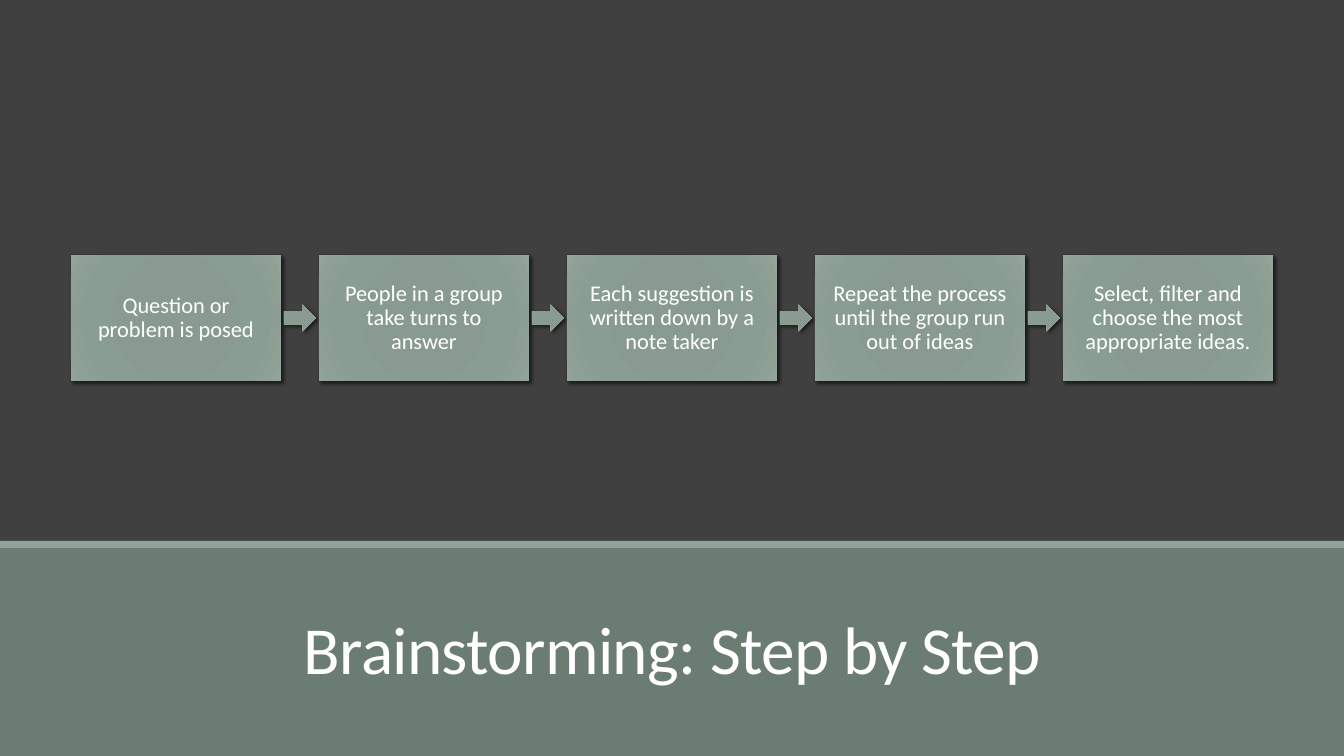
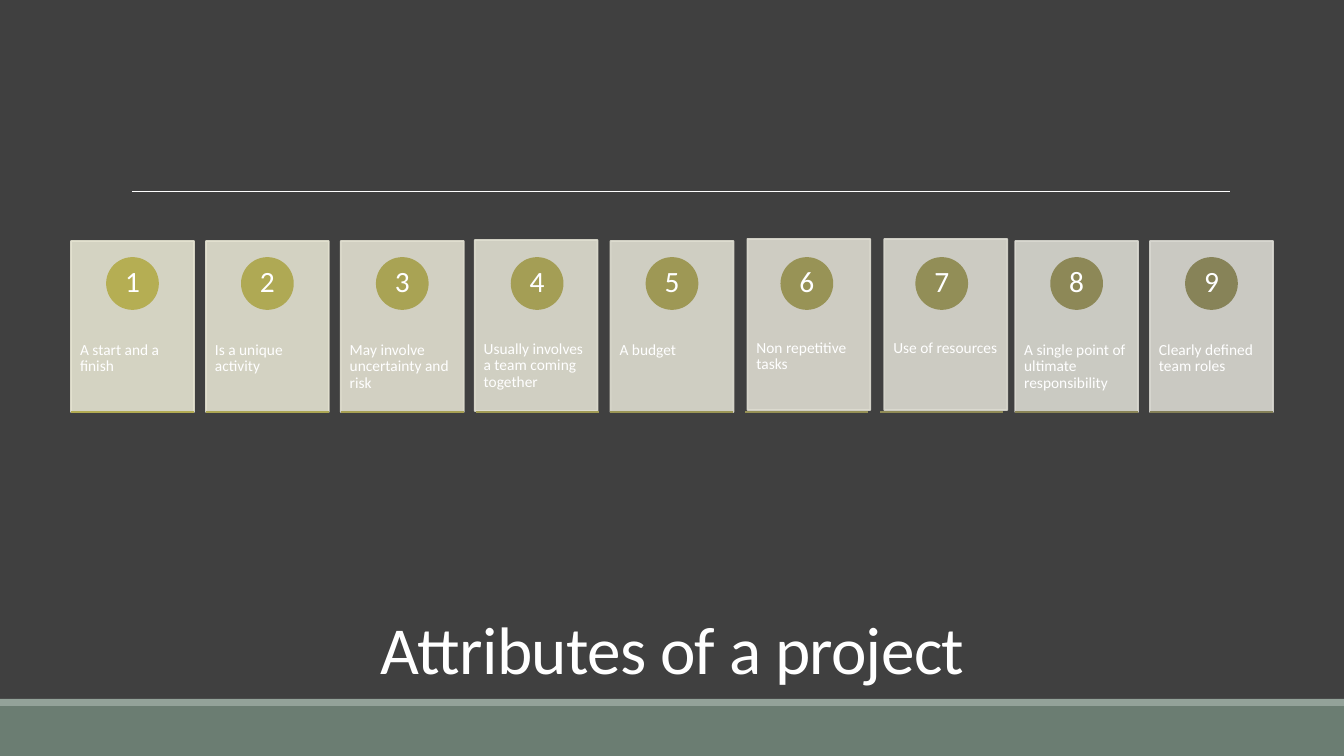
"""Build two slides: brainstorming steps and project attributes."""
from pptx import Presentation
from pptx import util as u
from pptx.dml import color
from pptx.enum import shapes, text
from pptx.oxml import parse_xml
from pptx.oxml import ns

PX = 914400 / 100.8
W, H = 1344, 756
FONT = "Calibri"
C = {
    "back": "404040", "panel": "6B7D72", "stripe": "93A299", "white": "FFFFFF",
    "badge_first": "B5AE53", "badge_last": "848058",
    "card_first": "E5E3D1", "card_last": "D9D8D1", "shadow": "000000",
}
GLOW = [(0, "87998E"), (34, "899A90"), (70, "8A9D92"), (100, "92A399")]
STEPS = [
    "Question or problem is posed",
    "People in a group take turns to answer",
    "Each suggestion is written down by a note taker",
    "Repeat the process until the group run out of ideas",
    "Select, filter and choose the most appropriate ideas.",
]
ATTRIBUTES = [
    "A start and a finish", "Is a unique activity",
    "May involve uncertainty and risk",
    "Usually involves a team coming together", "A budget",
    "Non repetitive tasks", "Use of resources",
    "A single point of ultimate responsibility", "Clearly defined team roles",
]
NUDGES = {3: (-1, -1), 5: (2, -2), 6: (4, -2)}
CENTER, LEFT = text.PP_ALIGN.CENTER, text.PP_ALIGN.LEFT
MIDDLE, TOP = text.MSO_ANCHOR.MIDDLE, text.MSO_ANCHOR.TOP
RECT = shapes.MSO_SHAPE.RECTANGLE


def px(n):
    """Turn px into EMU."""
    return u.Emu(round(n * PX))


def rgb(value):
    """Return a colour from a hex string."""
    return color.RGBColor.from_string(value)


def blend(first, last, t):
    """Return the hex colour at fraction t between two colours."""
    pairs = zip(rgb(first), rgb(last))
    return "".join(f"{round(a + (b - a) * t):02X}" for a, b in pairs)


def apply(obj, values):
    """Set attributes from a dict of format values."""
    for name, value in values.items():
        setattr(obj, name, value)


def write(sp, words, size, align=CENTER, anchor=MIDDLE, insets=(0, 0, 0, 0), spacing=0.9):
    """Put one formatted paragraph in a shape."""
    tf = sp.text_frame
    sides = ("margin_left", "margin_top", "margin_right", "margin_bottom")
    apply(tf, {"word_wrap": True, "auto_size": text.MSO_AUTO_SIZE.NONE,
               "vertical_anchor": anchor, **dict(zip(sides, map(px, insets)))})
    p = tf.paragraphs[0]
    apply(p, {"alignment": align, "line_spacing": spacing})
    r = p.add_run()
    r.text = words
    apply(r.font, {"name": FONT, "size": u.Pt(size)})
    r.font.color.rgb = rgb(C["white"])
    return r


def add_shape(s, kind, box, fill=None, line=0):
    """Add a shadowless preset shape, with an outline of its fill colour if asked."""
    sp = s.shapes.add_shape(kind, *map(px, box))
    sp.shadow.inherit = False
    if fill:
        sp.fill.solid()
        sp.fill.fore_color.rgb = rgb(fill)
    if line:
        sp.line.width = u.Pt(line)
        sp.line.color.rgb = rgb(fill)
    else:
        sp.line.fill.background()
    return sp


def add_line(s, x1, x2, y, hue, width):
    """Add a level line without a shadow."""
    c = s.shapes.add_connector(shapes.MSO_CONNECTOR.STRAIGHT, px(x1), px(y), px(x2), px(y))
    c.line.color.rgb = rgb(hue)
    c.line.width = u.Pt(width)
    c._element.spPr.append(parse_xml(f"<a:effectLst {ns.nsdecls('a')}/>"))


def add_glow(s, kind, box):
    """Add a shape with a radial gradient and a soft shadow."""
    sp = add_shape(s, kind, box)
    stops = "".join(f'<a:gs pos="{pos * 1000}"><a:srgbClr val="{hue}"/></a:gs>'
                    for pos, hue in GLOW)
    spPr = sp._element.spPr
    spPr.insert(2, parse_xml(
        f'<a:gradFill {ns.nsdecls("a")} rotWithShape="1"><a:gsLst>{stops}</a:gsLst>'
        '<a:path path="circle"><a:fillToRect l="100000" t="100000" r="100000" b="100000"/>'
        '</a:path></a:gradFill>'))
    spPr.find(ns.qn("a:effectLst")).append(parse_xml(
        f'<a:outerShdw {ns.nsdecls("a")} blurRad="38100" dist="25400" dir="2700000" '
        f'rotWithShape="0"><a:srgbClr val="{C["shadow"]}"><a:alpha val="60000"/>'
        '</a:srgbClr></a:outerShdw>'))
    return sp


def add_slide(prs, title, band_top):
    """Add a slide with its lower band and title."""
    s = prs.slides.add_slide(prs.slide_layouts[5])
    stripe = 7
    panel_top = band_top + stripe
    add_shape(s, RECT, (0, panel_top, W, H - panel_top), C["panel"])
    add_shape(s, RECT, (0, band_top, W, stripe), C["stripe"])
    sp = s.shapes.title
    apply(sp, dict(zip(("left", "top", "width", "height"), map(px, (118, 579, 1109, 114)))))
    r = write(sp, title, 48, anchor=text.MSO_ANCHOR.BOTTOM, insets=(10, 5, 10, 5), spacing=0.85)
    r._r.get_or_add_rPr().set("spc", "-50")
    s.shapes._spTree.append(sp._element)
    return s


def add_steps(s, x, y, w, h, pitch):
    """Draw the row of steps joined by arrows."""
    gap, arrow_w, arrow_h = 3, 32, 27
    for i, step in enumerate(STEPS):
        left = x + i * pitch
        if i:
            add_glow(s, shapes.MSO_SHAPE.RIGHT_ARROW,
                     (left - gap - arrow_w, y + (h - arrow_h) / 2, arrow_w, arrow_h))
        write(add_glow(s, RECT, (left, y, w, h)), step, 16, insets=(17, 17, 17, 17))


def add_card(s, x, y, w, h, i):
    """Draw one numbered attribute card with its base line."""
    dx, dy = NUDGES.get(i, (0, 0))
    last = 2 * len(ATTRIBUTES) - 1
    badge, base = (blend(C["badge_first"], C["badge_last"], (2 * i + k) / last) for k in (0, 1))
    fill = blend(C["card_first"], C["card_last"], i / (len(ATTRIBUTES) - 1))
    card = add_shape(s, RECT, (x + dx, y + dy, w, h), fill, 1.25)
    for clr in card._element.spPr.iter(ns.qn("a:srgbClr")):
        clr.append(parse_xml(f'<a:alpha {ns.nsdecls("a")} val="90000"/>'))
    write(card, ATTRIBUTES[i], 11, LEFT, TOP, (9, 101, 9, 0))
    size = 51
    circle = add_shape(s, shapes.MSO_SHAPE.OVAL,
                       (x + (w - size) / 2, y + 17, size, size), badge, 1.25)
    write(circle, str(i + 1), 21)
    add_line(s, x, x + w, y + h, base, 1.25)


def add_cards(s, x, y, w, h, card_w):
    """Spread the attribute cards evenly over a box."""
    pitch = (w - card_w) / (len(ATTRIBUTES) - 1)
    for i in range(len(ATTRIBUTES)):
        add_card(s, x + i * pitch, y, card_w, h, i)


def main():
    """Build and save the slides."""
    prs = Presentation()
    apply(prs, {"slide_width": px(W), "slide_height": px(H)})
    back = prs.slide_master.background.fill
    back.solid()
    back.fore_color.rgb = rgb(C["back"])

    s = add_slide(prs, "Brainstorming: Step by Step", 541)
    add_steps(s, 71, 255, 210, 126, 248)

    s = add_slide(prs, "Attributes of a project", 699)
    add_line(s, 132, 1230, 191, C["white"], 0.5)
    add_cards(s, 71, 241, 1202, 171, 123)

    prs.save("out.pptx")


if __name__ == "__main__":
    main()
